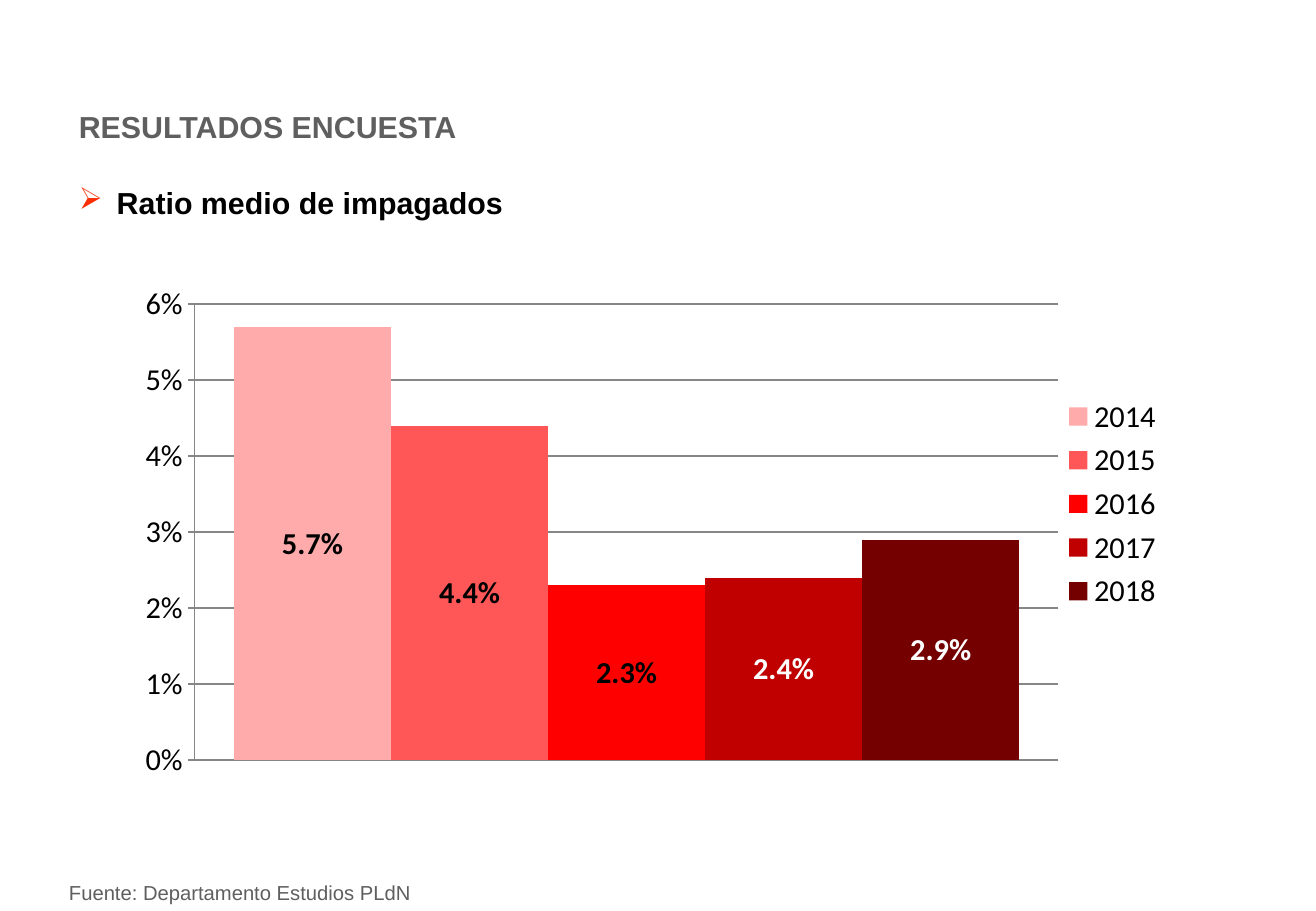
from typing import NamedTuple

from lxml import etree
from pptx import Presentation
from pptx.chart.chart import Chart
from pptx.chart.data import CategoryChartData
from pptx.dml.color import RGBColor
from pptx.enum.chart import (XL_CHART_TYPE, XL_LABEL_POSITION,
                             XL_LEGEND_POSITION, XL_TICK_MARK)
from pptx.enum.text import MSO_ANCHOR, MSO_AUTO_SIZE
from pptx.oxml import parse_xml
from pptx.oxml.ns import nsdecls, qn
from pptx.slide import Slide
from pptx.text.text import Font
from pptx.util import Pt

COLUMNS = XL_CHART_TYPE.COLUMN_CLUSTERED
CENTER = XL_LABEL_POSITION.CENTER
RIGHT = XL_LEGEND_POSITION.RIGHT
OUTSIDE = XL_TICK_MARK.OUTSIDE
TOP, MIDDLE = MSO_ANCHOR.TOP, MSO_ANCHOR.MIDDLE
GROW = MSO_AUTO_SIZE.SHAPE_TO_FIT_TEXT

COLORS = {
    "black": "000000", "white": "FFFFFF", "gray": "5F5F5F",
    "line": "868686", "bullet": "F92E05",
    "2014": "FFABAB", "2015": "FF5757", "2016": "FF0000",
    "2017": "C00000", "2018": "740000",
}
INDENT = 22.5


class Label(NamedTuple):
    text: str
    left: float
    top: float
    width: float
    height: float
    size: float
    color: str
    bold: bool = True
    bullet: str = ""
    anchor: MSO_ANCHOR = TOP


class Year(NamedTuple):
    name: str
    ratio: float
    ink: str = "black"


LABELS = [
    Label("Ratio medio de impagados", 39.6, 105.8, 663, 28.8, 18, "black",
          bullet="➢"),
    Label("RESULTADOS ENCUESTA", 39.6, 60.5, 546.5, 28.8, 18, "gray"),
    Label("Fuente: Departamento Estudios PLdN", 33.8, 518.4, 478.8, 21.6, 12,
          "gray", bold=False, anchor=MIDDLE),
]
YEARS = [
    Year("2014", 0.057),
    Year("2015", 0.044),
    Year("2016", 0.023),
    Year("2017", 0.024, "white"),
    Year("2018", 0.029, "white"),
]


def color(name: str) -> RGBColor:
    return RGBColor.from_string(COLORS[name])


def style(font: Font, face: str, size: float, ink: str, bold: bool) -> None:
    font.name, font.size, font.bold = face, Pt(size), bold
    font.color.rgb = color(ink)


def add_label(slide: Slide, label: Label) -> None:
    box = slide.shapes.add_textbox(Pt(label.left), Pt(label.top),
                                   Pt(label.width), Pt(label.height))
    frame = box.text_frame
    frame.word_wrap = True
    frame.auto_size = GROW
    frame.vertical_anchor = label.anchor
    para = frame.paragraphs[0]
    if label.bullet:
        props = para._p.get_or_add_pPr()
        props.set("marL", str(Pt(INDENT)))
        props.set("indent", str(-Pt(INDENT)))
        tint = etree.SubElement(props, qn("a:buClr"))
        etree.SubElement(tint, qn("a:srgbClr"), val=COLORS["bullet"])
        etree.SubElement(props, qn("a:buChar"), char=label.bullet)
    run = para.add_run()
    run.text = label.text
    style(run.font, "Arial", label.size, label.color, label.bold)


def set_layout(parent: etree._Element, index: int, inner: bool,
               x: float, y: float, w: float, h: float) -> None:
    """Place a chart part by fractions of the chart's size."""
    for old in parent.findall(qn("c:layout")):
        parent.remove(old)
    target = '<c:layoutTarget val="inner"/>' if inner else ""
    parent.insert(index, parse_xml(
        f'<c:layout {nsdecls("c")}><c:manualLayout>{target}'
        '<c:xMode val="edge"/><c:yMode val="edge"/>'
        f'<c:x val="{x}"/><c:y val="{y}"/><c:w val="{w}"/><c:h val="{h}"/>'
        '</c:manualLayout></c:layout>'))


def style_axes(chart: Chart) -> None:
    chart.category_axis.visible = False
    axis = chart.value_axis
    axis.minimum_scale, axis.maximum_scale = 0, 0.06
    axis.major_unit = 0.01
    axis.major_tick_mark = OUTSIDE
    axis.has_major_gridlines = True
    axis.tick_labels.number_format = "0%"
    axis.tick_labels.number_format_is_linked = False
    for line in (axis.format.line, axis.major_gridlines.format.line):
        line.color.rgb = color("line")
        line.width = Pt(0.75)


def add_ratios(slide: Slide) -> None:
    data = CategoryChartData(number_format="0.0%")
    data.categories = ["1"]
    for year in YEARS:
        data.add_series(year.name, [year.ratio])
    chart = slide.shapes.add_chart(COLUMNS, Pt(70.6), Pt(162), Pt(640),
                                   Pt(303.8), data).chart
    chart.has_title = False
    style(chart.font, "Calibri", 18, "black", False)
    style_axes(chart)

    plot = chart.plots[0]
    plot.gap_width, plot.overlap = 50, 0
    plot.vary_by_categories = False
    for year, series in zip(YEARS, plot.series):
        series.format.fill.solid()
        series.format.fill.fore_color.rgb = color(year.name)
        marks = series.data_labels
        marks.show_value = True
        marks.position = CENTER
        marks.number_format = "0.0%"
        marks.number_format_is_linked = False
        style(marks.font, "Calibri", 18, year.ink, True)

    chart.has_legend = True
    legend = chart.legend
    legend.position = RIGHT
    legend.include_in_layout = False
    set_layout(chart._chartSpace.chart.plotArea, 0, True,
               0.07, 0.06, 0.8, 0.89)
    set_layout(legend._element, 1, False, 0.87, 0.23, 0.1, 0.44)


def main() -> None:
    deck = Presentation()
    deck.slide_width, deck.slide_height = Pt(780), Pt(540)
    slide = deck.slides.add_slide(deck.slide_layouts[6])
    slide.background.fill.solid()
    slide.background.fill.fore_color.rgb = color("white")
    for label in LABELS:
        add_label(slide, label)
    add_ratios(slide)
    deck.save("out.pptx")


if __name__ == "__main__":
    main()
